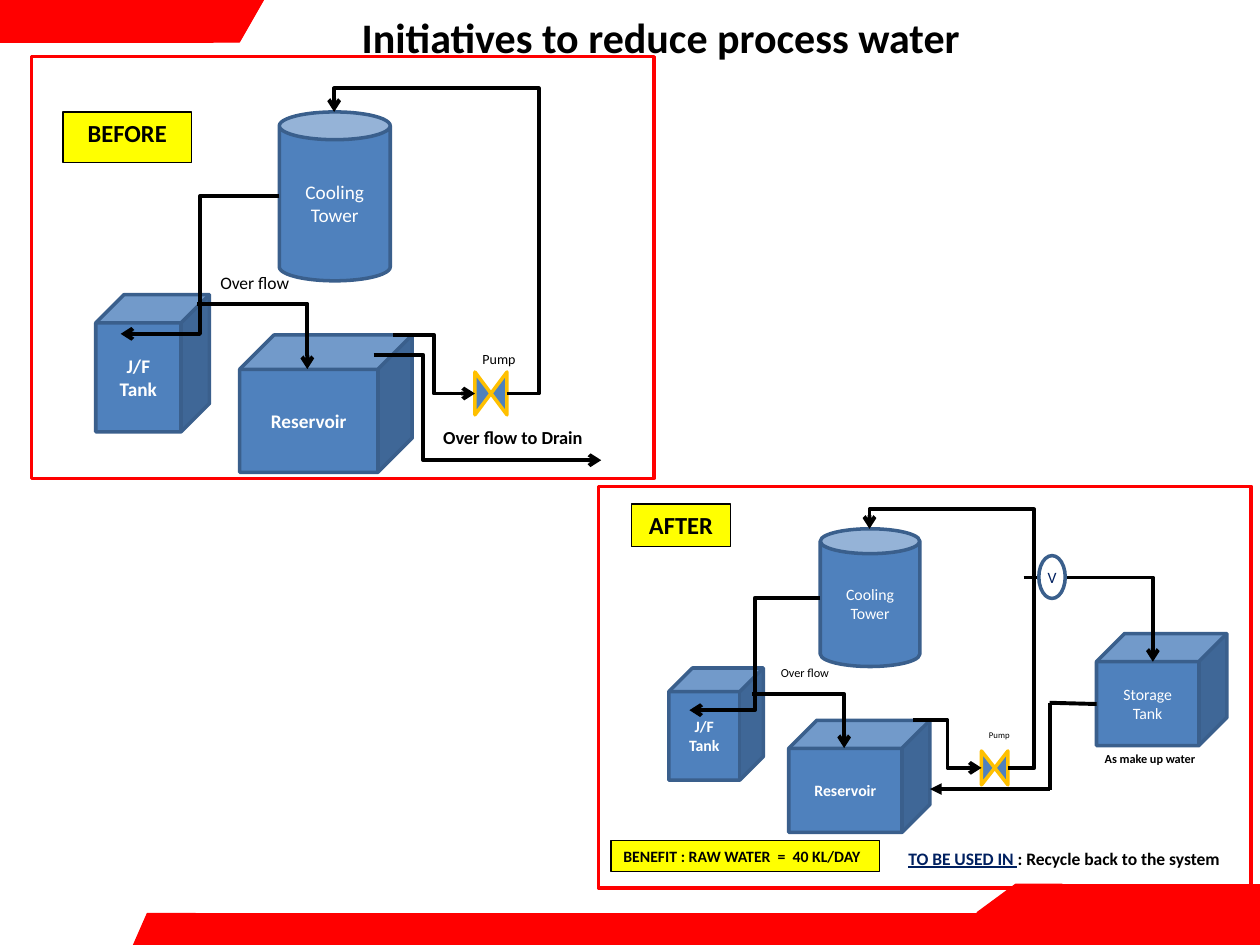
from lxml import etree
from pptx import Presentation
from pptx.dml.color import RGBColor
from pptx.enum import shapes, text
from pptx.oxml import ns
from pptx.util import Pt

COLORS = {"red": "FF0000", "blue": "4F81BD", "edge": "3A5F8C", "gold": "FFC000",
          "yellow": "FFFF00", "navy": "002060", "white": "FFFFFF", "black": "000000"}
KIND = shapes.MSO_SHAPE


def color(name):
    return RGBColor.from_string(COLORS[name])


def style(s, fill, line, width, label="", size=9, ink="white", bold=False, align="CENTER"):
    """Set fill, outline and text of a shape; None means no fill or no line."""
    for part, name in ((s.fill, fill), (s.line.fill, line)):
        if name:
            part.solid()
            part.fore_color.rgb = color(name)
        else:
            part.background()
    if line:
        s.line.width = Pt(width)
    s.shadow.inherit = False
    if label:
        p = s.text_frame.paragraphs[0]
        p.text = label
        p.alignment = getattr(text.PP_ALIGN, align)
        p.font.name, p.font.size, p.font.bold = "Calibri", Pt(size), bold
        p.font.color.rgb = color(ink)


prs = Presentation()
prs.slide_width, prs.slide_height = Pt(720), Pt(540)
slide = prs.slides.add_slide(prs.slide_layouts[5])
tree = slide.shapes

# Title
title = tree.title
title.left, title.top, title.width, title.height = Pt(199.5), Pt(3), Pt(361.5), Pt(36)
tf = title.text_frame
tf.text = "Initiatives to reduce process water"
tf.vertical_anchor = text.MSO_ANCHOR.TOP
p = tf.paragraphs[0]
p.alignment = text.PP_ALIGN.LEFT
p.font.name, p.font.size, p.font.bold = "Calibri", Pt(24), True
p.font.color.rgb = color("black")

# Red corner bands with slanted ends
for box in [(0, 0, 121.7, 24), (598.3, 505.4, 121.7, 16.6), (110.2, 522, 609.8, 18)]:
    style(tree.add_shape(KIND.RECTANGLE, *map(Pt, box)), "red", "red", 0.75)
for corners in [
    [(95.8, 0), (109.4, 24), (136.8, 24), (150.5, 0)],
    [(620.9, 522), (607, 505.4), (580.3, 505.4), (558.4, 521.5)],
    [(125.3, 540), (111.6, 522), (84.2, 522), (76.3, 540)],
]:
    points = [(Pt(x), Pt(y)) for x, y in corners]
    builder = tree.build_freeform(*points[0])
    builder.add_line_segments(points[1:], close=True)
    style(builder.convert_to_shape(), "red", "red", 0.75)

# Vessels: kind, box, label, size, bold
for kind, box, label, size, bold in [
    (KIND.CAN, (159.6, 64, 63.4, 96.5), "Cooling Tower", 11, False),
    (KIND.CUBE, (54.7, 168.3, 65, 78.5), "J/F Tank", 11, True),
    (KIND.CUBE, (137, 191.4, 98.6, 78.5), "Reservoir", 11, True),
    (KIND.CAN, (468.7, 302.2, 56.9, 78.7), "Cooling Tower", 9, False),
    (KIND.CUBE, (382.2, 381.7, 54, 64.1), "J/F Tank", 9, True),
    (KIND.CUBE, (450.7, 411.6, 80.7, 64.1), "Reservoir", 9, True),
    (KIND.CUBE, (626.6, 362, 74.5, 64.1), "Storage Tank", 9, False),
]:
    style(tree.add_shape(kind, *map(Pt, box)), "blue", "edge", 2, label, size, bold=bold)

for box in [(268.3, 215.7, 24.5, 18.3), (558.7, 431.3, 19.4, 15.1)]:
    pump = tree.add_shape(KIND.FLOWCHART_COLLATE, *map(Pt, box))
    pump.rotation = 90
    style(pump, "blue", "gold", 2)

# Pipes: start, end, preset, bend positions in 1/100000 of the size, arrowhead
for start, end, preset, bends, head in [
    ((159.6, 112.1), (69, 190.8), "bentConnector3", [50000], "arrow"),
    ((112.6, 173.5), (175.6, 210.9), "bentConnector2", [], "arrow"),
    ((289.6, 224.9), (191, 64), "bentConnector4", [-18600, 108400], "arrow"),
    ((224.6, 191.4), (271.4, 224.9), "bentConnector3", [50000], "arrow"),
    ((213.6, 202.8), (343.6, 263), "bentConnector3", [21800], "arrow"),
    ((468.7, 341.6), (394, 405.8), "bentConnector3", [50000], "arrow"),
    ((429.8, 396.6), (482.4, 427.5), "bentConnector2", [], "arrow"),
    ((576, 438.8), (496.9, 302.2), "bentConnector4", [-19100, 108100], "arrow"),
    ((608.4, 330), (658.8, 378.2), "bentConnector2", [], "arrow"),
    ((522, 411.6), (560.9, 438.8), "bentConnector3", [50000], "arrow"),
    ((584.9, 330), (594, 330), "line", [], None),
    ((626.6, 402.3), (599.8, 401.6), "line", [], None),
    ((599.8, 451.3), (599.8, 401.6), "line", [], None),
    ((599.8, 450.9), (531.4, 450.9), "line", [], "triangle"),
]:
    pipe = tree.add_connector(shapes.MSO_CONNECTOR.STRAIGHT, *map(Pt, start + end))
    pipe.line.color.rgb = color("black")
    pipe.line.width = Pt(2.25)
    props = pipe._element.spPr
    geometry = props.find(ns.qn("a:prstGeom"))
    geometry.set("prst", preset)
    for i, bend in enumerate(bends, 1):
        name = "adj" if preset == "line" else f"adj{i}"
        etree.SubElement(geometry.find(ns.qn("a:avLst")), ns.qn("a:gd"),
                         name=name, fmla=f"val {bend}")
    if head:
        etree.SubElement(props.find(ns.qn("a:ln")), ns.qn("a:tailEnd"), type=head)
    etree.SubElement(props, ns.qn("a:effectLst"))

valve = tree.add_shape(KIND.OVAL, Pt(593.6), Pt(317.5), Pt(15.1), Pt(24.5))
style(valve, None, "edge", 2, "V", 9, "navy")
valve.text_frame.margin_left = valve.text_frame.margin_right = 0

# Yellow tags
for box, label, size, align in [
    ((36, 64, 73.4, 29), "BEFORE", 14, "CENTER"),
    ((360.7, 288, 56.9, 24.5), "AFTER", 14, "CENTER"),
    ((349.2, 480.2, 153.4, 18), "BENEFIT : RAW WATER  =  40 KL/DAY", 9, "LEFT"),
]:
    tag = tree.add_shape(KIND.RECTANGLE, *map(Pt, box))
    style(tag, "yellow", "black", 0.75, label, size, "black", True, align)
    tag.text_frame.vertical_anchor = text.MSO_ANCHOR.TOP
    tag.text_frame.word_wrap = align == "CENTER"

# Captions
for box, label, size, bold in [
    ((118.8, 152, 64.8, 23), "Over flow", 10, False),
    ((246.2, 239.8, 113.8, 23.8), "Over flow to Drain", 10.5, True),
    ((268.6, 196.6, 40.3, 20.2), "Pump", 8, False),
    ((439.2, 376.6, 50.4, 19.4), "Over flow", 7, False),
    ((624.2, 425.5, 79.9, 19.4), "As make up water", 7, True),
    ((558, 413.3, 31.7, 16.6), "Pump", 5, False),
    ((512, 481, 195.8, 19.4), "TO BE USED IN ", 10, True),
]:
    caption = tree.add_textbox(*map(Pt, box))
    caption.text_frame.word_wrap = False
    style(caption, None, None, 0, label, size, "black", bold, "LEFT")

# The last caption goes on after its underlined lead
p = caption.text_frame.paragraphs[0]
p.runs[0].font.underline = True
p.runs[0].font.color.rgb = color("navy")
p.add_run().text = ": Recycle back to the system"

# Panel frames
for box in [(18, 32.4, 355.7, 241), (342, 278, 373, 229.6)]:
    style(tree.add_shape(KIND.RECTANGLE, *map(Pt, box)), None, "red", 2)

prs.save("out.pptx")
